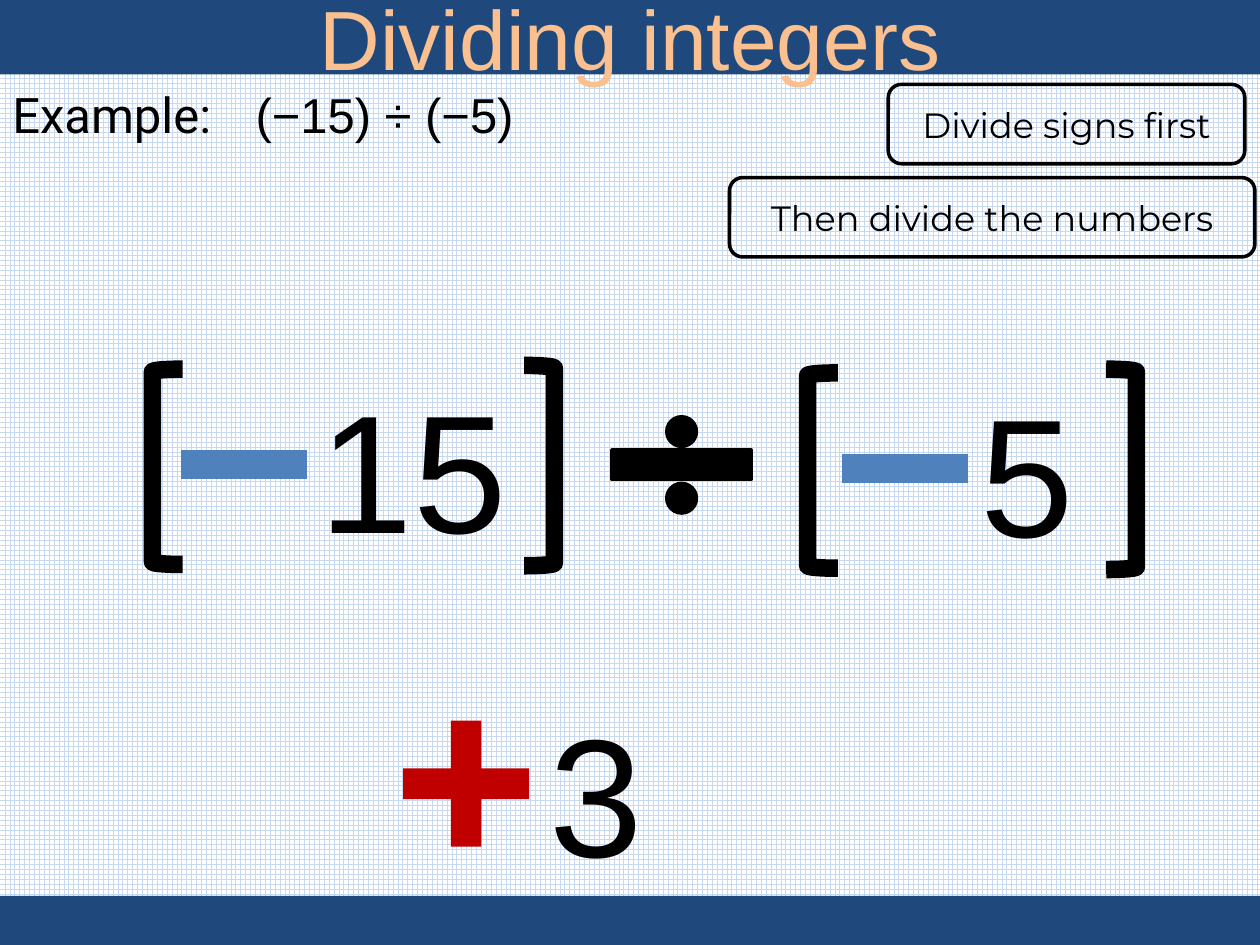
from dataclasses import dataclass

from lxml import etree
from pptx import Presentation
from pptx.dml.color import RGBColor
from pptx.enum import dml, shapes, text
from pptx.oxml import ns
from pptx.util import Inches, Pt


@dataclass(frozen=True)
class Theme:
    navy: str = "1F497D"
    grid: str = "C6D9F1"
    paper: str = "FFFFFF"
    heading: str = "FAC090"
    ink: str = "000000"
    minus: str = "4F81BD"
    plus: str = "C00000"
    heading_size: int = 48
    example_size: int = 28
    hint_size: int = 20
    number_size: int = 96
    body_font: str = "Arial"
    label_font: str = "Roboto"
    hint_font: str = "Montserrat"


THEME = Theme()
SHAPE = shapes.MSO_SHAPE


def rgb(color):
    return RGBColor.from_string(color)


def place(item, left, top, width, height):
    item.left, item.top = Inches(left), Inches(top)
    item.width, item.height = Inches(width), Inches(height)


def paint(item, color):
    item.fill.solid()
    item.fill.fore_color.rgb = rgb(color)


def write(frame, words, size, font=THEME.body_font, color=THEME.ink, align=None):
    frame.text = words
    paragraph = frame.paragraphs[0]
    paragraph.alignment = align
    run = paragraph.runs[0]
    run.font.size = Pt(size)
    run.font.name = font
    run.font.color.rgb = rgb(color)
    return run


def outline_letters(run, color, width):
    properties = run.font._element
    line = etree.Element(ns.qn("a:ln"), w=str(Pt(width)))
    fill = etree.SubElement(line, ns.qn("a:solidFill"))
    etree.SubElement(fill, ns.qn("a:srgbClr"), val=color)
    properties.insert(0, line)


def set_background(slide):
    fill = slide.background.fill
    fill.patterned()
    fill.pattern = dml.MSO_PATTERN.LARGE_GRID
    fill.fore_color.rgb = rgb(THEME.grid)
    fill.back_color.rgb = rgb(THEME.paper)


def add_heading(slide, words):
    heading = slide.shapes.title
    place(heading, 0, 0, 10, 0.59)
    paint(heading, THEME.navy)
    frame = heading.text_frame
    frame.auto_size = text.MSO_AUTO_SIZE.NONE
    frame.vertical_anchor = text.MSO_ANCHOR.MIDDLE
    run = write(frame, words, THEME.heading_size, color=THEME.heading,
                align=text.PP_ALIGN.CENTER)
    outline_letters(run, THEME.ink, 0.75)


def add_figure(slide, kind, box, fill=None, line_width=None):
    """Add a preset shape; without a fill or a line width that part stays empty."""
    figure = slide.shapes.add_shape(kind, *map(Inches, box))
    figure.shadow.inherit = False
    if fill:
        paint(figure, fill)
    else:
        figure.fill.background()
    if line_width:
        figure.line.color.rgb = rgb(THEME.ink)
        figure.line.width = Pt(line_width)
    else:
        figure.line.fill.background()
    return figure


def add_label(slide, words, box, size, font=THEME.body_font):
    frame = slide.shapes.add_textbox(*map(Inches, box)).text_frame
    frame.word_wrap = False
    frame.auto_size = text.MSO_AUTO_SIZE.SHAPE_TO_FIT_TEXT
    write(frame, words, size, font)


def add_hint(slide, words, box):
    frame = add_figure(slide, SHAPE.ROUNDED_RECTANGLE, box, line_width=2).text_frame
    frame.word_wrap = True
    frame.vertical_anchor = text.MSO_ANCHOR.MIDDLE
    write(frame, words, THEME.hint_size, THEME.hint_font, align=text.PP_ALIGN.CENTER)


def add_negative(slide, digits, sign_left, sign_top, digits_width, left_edge, right_edge):
    """Add a bracketed negative number, placed from its minus sign."""
    add_figure(slide, SHAPE.FLOWCHART_PROCESS, (sign_left, sign_top, 1, 0.23), THEME.minus)
    add_figure(slide, SHAPE.LEFT_BRACKET, (left_edge, sign_top - 0.64, 0.24, 1.55),
               line_width=10)
    add_label(slide, digits, (sign_left + 1, sign_top - 0.72, digits_width, 1.72),
              THEME.number_size)
    add_figure(slide, SHAPE.RIGHT_BRACKET, (right_edge, sign_top - 0.67, 0.24, 1.59),
               line_width=10)


def add_answer(slide):
    plus = add_figure(slide, SHAPE.CROSS, (3.2, 5.72, 1, 1), THEME.plus)
    plus.adjustments[0] = 0.378
    add_label(slide, "3", (4.26, 5.42, 1.29, 1.72), THEME.number_size)


def main():
    deck = Presentation()
    deck.slide_width, deck.slide_height = Inches(10), Inches(7.5)
    slide = deck.slides.add_slide(deck.slide_layouts.get_by_name("Title Only"))

    set_background(slide)
    add_heading(slide, "Dividing integers")
    add_figure(slide, SHAPE.RECTANGLE, (0, 7.11, 10, 0.39), THEME.navy)

    add_label(slide, "Example:", (0, 0.62, 2.04, 0.57), THEME.example_size,
              THEME.label_font)
    add_label(slide, "(−15) ÷ (−5)", (1.93, 0.62, 2.94, 0.57), THEME.example_size)
    add_hint(slide, "Divide signs first", (7.05, 0.67, 2.83, 0.63))
    add_hint(slide, "Then divide the numbers", (5.79, 1.41, 4.17, 0.63))

    add_negative(slide, "15", 1.44, 3.57, 2, left_edge=1.21, right_edge=4.16)
    add_negative(slide, "5", 6.68, 3.6, 1.32, left_edge=6.41, right_edge=8.78)
    add_answer(slide)
    add_figure(slide, SHAPE.MATH_DIVIDE, (4.66, 3.19, 1.5, 1), THEME.ink, line_width=2)

    deck.save("out.pptx")


if __name__ == "__main__":
    main()
